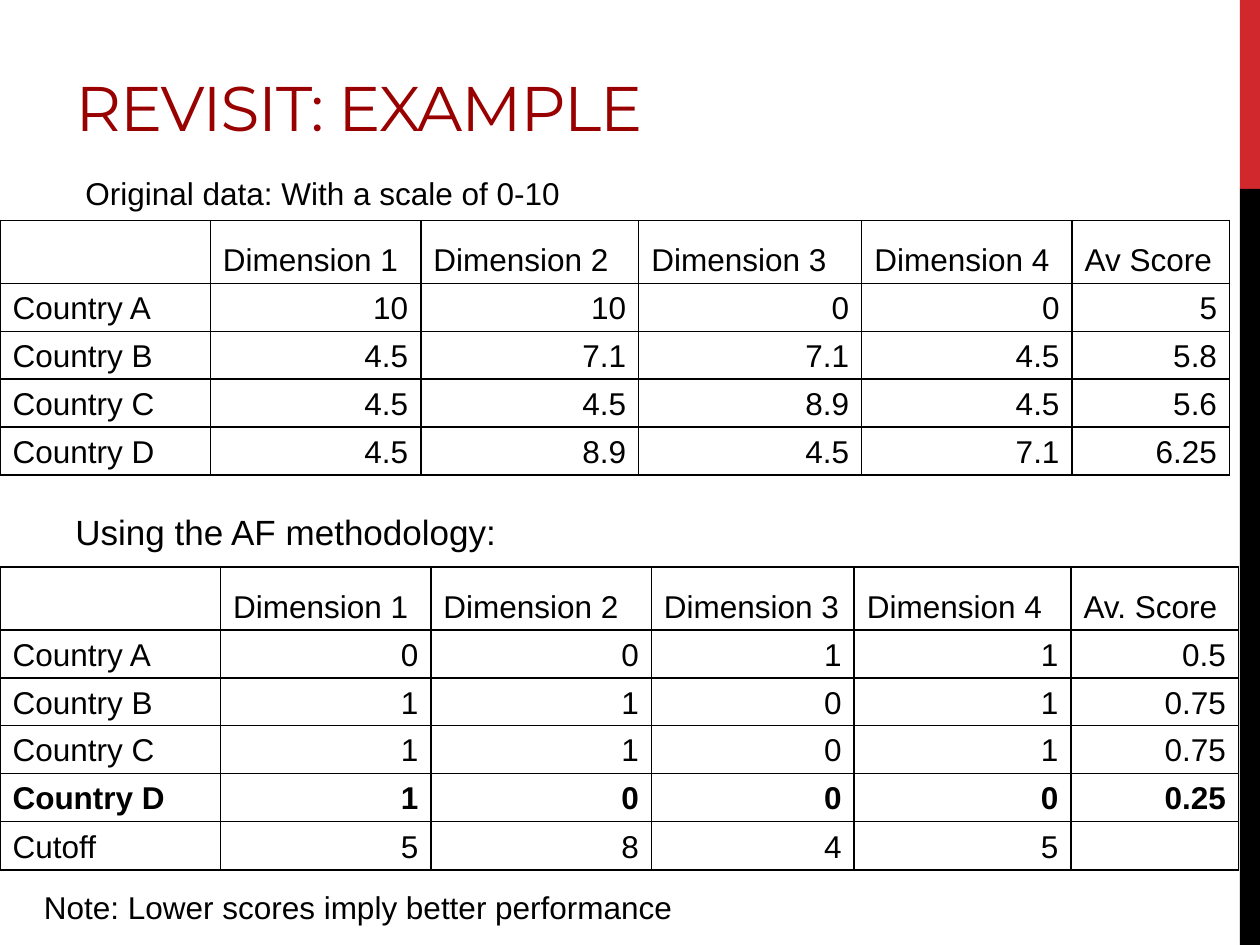
import pptx
import pptx.util
import pptx.dml.color
import pptx.enum.shapes
import pptx.enum.text
import pptx.oxml.ns
from lxml import etree

Inches, Pt = pptx.util.Inches, pptx.util.Pt
RGBColor = pptx.dml.color.RGBColor
ALIGN, ANCHOR = pptx.enum.text.PP_ALIGN, pptx.enum.text.MSO_ANCHOR
qn = pptx.oxml.ns.qn

RED = RGBColor(0xD1, 0x28, 0x2E)
BLACK = RGBColor(0, 0, 0)
DARK = RGBColor(0x99, 0, 0)

TITLE = "REVISIT: EXAMPLE"
BARS = [(0, 1.5, RED), (1.5, 6, BLACK)]
DIMS = ["Dimension 1", "Dimension 2", "Dimension 3", "Dimension 4"]
TABLES = [
    dict(top=1.75, cols=[1.67, 1.67, 1.73, 1.77, 1.67, 1.25], bold=None, rows=[
        ["", *DIMS, "Av Score"],
        ["Country A", "10", "10", "0", "0", "5"],
        ["Country B", "4.5", "7.1", "7.1", "4.5", "5.8"],
        ["Country C", "4.5", "4.5", "8.9", "4.5", "5.6"],
        ["Country D", "4.5", "8.9", "4.5", "7.1", "6.25"],
    ]),
    dict(top=4.5, cols=[1.75, 1.67, 1.75, 1.61, 1.72, 1.33], bold="Country D", rows=[
        ["", *DIMS, "Av. Score"],
        ["Country A", "0", "0", "1", "1", "0.5"],
        ["Country B", "1", "1", "0", "1", "0.75"],
        ["Country C", "1", "1", "0", "1", "0.75"],
        ["Country D", "1", "0", "0", "0", "0.25"],
        ["Cutoff", "5", "8", "4", "5", ""],
    ]),
]
LABELS = [
    ("Using the AF methodology:", (0.5, 4, 8.5, 0.43), 20),
    ("Note: Lower scores imply better performance", (0.25, 7, 9, 0.4), 18),
    ("Original data: With a scale of 0-10", (0.58, 1.33, 6.92, 0.4), 18),
]
HEAD, ROW = 0.5, 0.38


def write(frame, text, size=18, font="Arial", color=BLACK, bold=False, align=ALIGN.LEFT):
    para = frame.paragraphs[0]
    para.alignment = align
    run = para.add_run()
    run.text = text
    run.font.size = Pt(size)
    run.font.name = font
    run.font.bold = bold
    run.font.color.rgb = color
    return run


def hang(para, inches):
    props = para._p.get_or_add_pPr()
    props.set("marL", str(Inches(inches)))
    props.set("indent", str(-Inches(inches)))


def border(cell):
    """Draw a thin black line on each side of the cell."""
    props = cell._tc.get_or_add_tcPr()
    for spot, side in enumerate(("lnL", "lnR", "lnT", "lnB")):
        line = etree.Element(qn("a:" + side), w=str(Pt(1)))
        fill = etree.SubElement(line, qn("a:solidFill"))
        etree.SubElement(fill, qn("a:srgbClr"), val=str(BLACK))
        props.insert(spot, line)


def add_grid(slide, top, cols, rows, bold):
    high = HEAD + ROW * (len(rows) - 1)
    table = slide.shapes.add_table(len(rows), len(cols), 0, Inches(top),
                                   Inches(sum(cols)), Inches(high)).table
    for col, wide in zip(table.columns, cols):
        col.width = Inches(wide)
    for r, row in enumerate(rows):
        table.rows[r].height = Inches(ROW if r else HEAD)
        for c, text in enumerate(row):
            cell = table.cell(r, c)
            cell.fill.background()
            cell.vertical_anchor = ANCHOR.BOTTOM
            cell.margin_top = cell.margin_bottom = Inches(0.04)
            border(cell)
            if text:
                write(cell.text_frame, text, bold=row[0] == bold,
                      align=ALIGN.RIGHT if r and c else ALIGN.LEFT)
                hang(cell.text_frame.paragraphs[0], 0.38)
            else:
                cell.text_frame.paragraphs[0].font.size = Pt(18)


def main():
    deck = pptx.Presentation()
    deck.slide_width, deck.slide_height = Inches(10), Inches(7.5)
    slide = deck.slides.add_slide(deck.slide_layouts[5])

    title = slide.shapes.title
    title.left, title.top = Inches(0.5), Inches(0.17)
    title.width, title.height = Inches(9), Inches(1)
    title.text_frame.vertical_anchor = ANCHOR.BOTTOM
    title.text_frame.margin_bottom = Inches(0.03)
    run = write(title.text_frame, TITLE, size=36, font="Montserrat", color=DARK)
    run.font._element.set("spc", "-60")

    for top, high, color in BARS:
        bar = slide.shapes.add_shape(pptx.enum.shapes.MSO_SHAPE.RECTANGLE, Inches(9.84),
                                     Inches(top), Inches(0.16), Inches(high))
        bar.shadow.inherit = False
        bar.fill.solid()
        bar.fill.fore_color.rgb = color
        bar.line.fill.background()

    for grid in TABLES:
        add_grid(slide, **grid)

    for text, place, size in LABELS:
        frame = slide.shapes.add_textbox(*map(Inches, place)).text_frame
        frame.word_wrap = True
        frame.auto_size = pptx.enum.text.MSO_AUTO_SIZE.SHAPE_TO_FIT_TEXT
        write(frame, text, size=size)

    deck.save("out.pptx")


if __name__ == "__main__":
    main()
